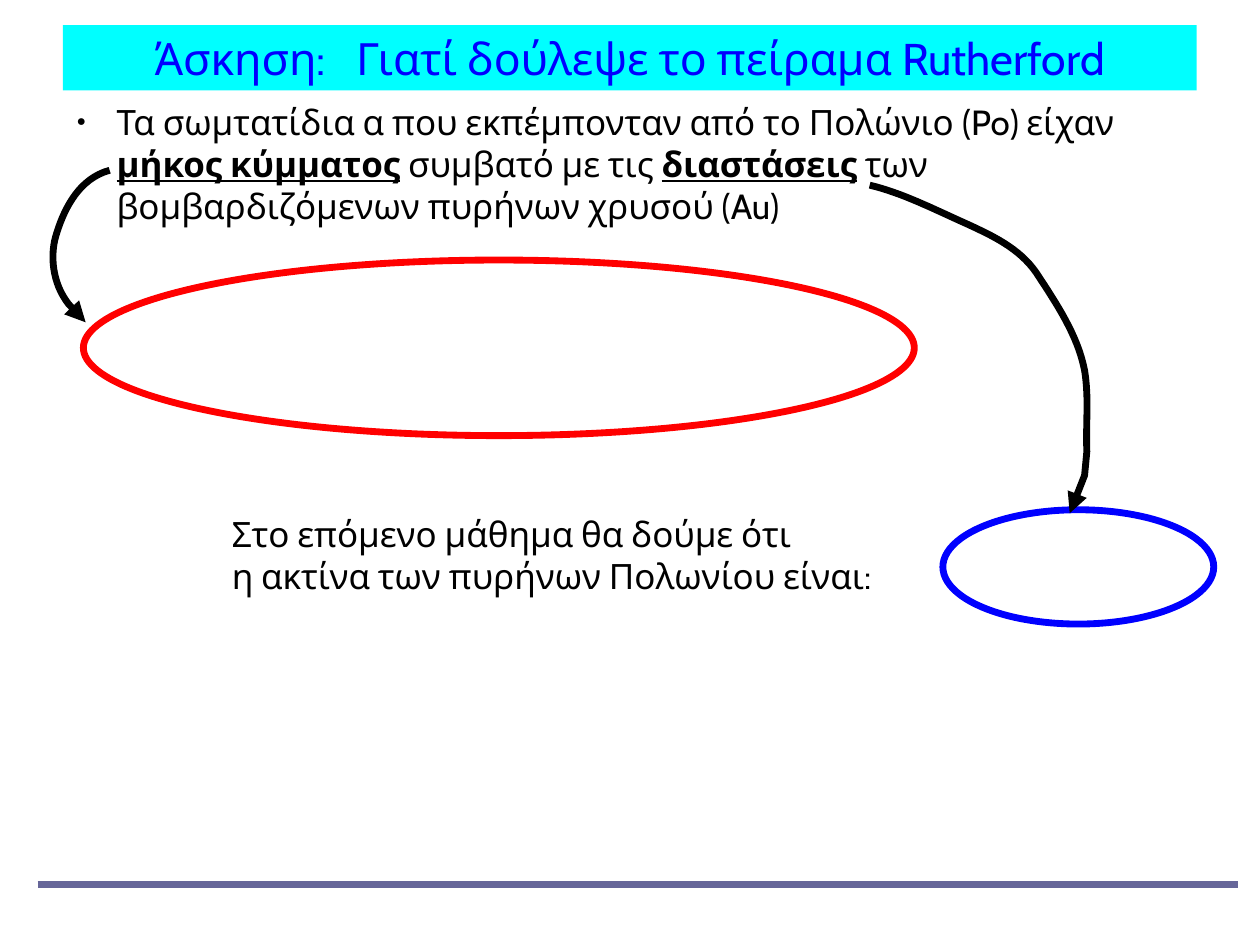
"""Build the slide on why the Rutherford experiment worked."""
from dataclasses import dataclass
from typing import NamedTuple

import lxml.etree
import pptx
import pptx.dml.color
import pptx.dml.line
import pptx.enum.shapes
import pptx.enum.text
import pptx.oxml.ns
import pptx.shapes.base
import pptx.slide
import pptx.text.text
import pptx.util

Pt = pptx.util.Pt
RGB = pptx.dml.color.RGBColor
Point = tuple[float, float]


@dataclass(frozen=True)
class Theme:
    font: str = "Cabin"
    title_size: float = 28
    body_size: float = 22
    stroke: float = 4.31
    ink: RGB = RGB(0, 0, 0)
    blue: RGB = RGB(0, 0, 255)
    red: RGB = RGB(255, 0, 0)
    cyan: RGB = RGB(0, 255, 255)
    rule: RGB = RGB(0x66, 0x66, 0x99)


THEME = Theme()


class Box(NamedTuple):
    left: float
    top: float
    width: float
    height: float


class Phrase(NamedTuple):
    text: str
    key: bool = False
    gap: float = 0


class Ring(NamedTuple):
    box: Box
    color: RGB


class Arrow(NamedTuple):
    start: Point
    curves: list[tuple[Point, Point, Point]]
    corners: list[Point]


PAGE = (793.75, 595.25)
TITLE_BOX = Box(39.6, 15.84, 714.24, 41.04)
BODY_BOX = Box(39.6, 63.36, 714.24, 461.52)
NOTE_BOX = Box(138.96, 319.3, 453.6, 58.32)
FOOT_RULE = ((23.76, 556.9), (779.76, 556.9))

TITLE = [
    Phrase("Άσκηση:"),
    Phrase(" ", gap=13),
    Phrase("Γιατί δούλεψε το πείραμα Rutherford"),
]
BODY = [
    Phrase("Τα σωμτατίδια α που εκπέμπονταν από το Πολώνιο (Po) είχαν "),
    Phrase("μήκος κύμματος", key=True),
    Phrase(" συμβατό με τις "),
    Phrase("διαστάσεις", key=True),
    Phrase(" των βομβαρδιζόμενων πυρήνων χρυσού (Au)"),
]
NOTE = [
    Phrase("Στο επόμενο μάθημα θα δούμε ότι"),
    Phrase("η ακτίνα των πυρήνων Πολωνίου είναι:"),
]
RINGS = [
    Ring(Box(594, 321.12, 170.64, 72), THEME.blue),
    Ring(Box(52.56, 163.8, 523.44, 110.6), THEME.red),
]
ARROWS = [
    Arrow(
        (69.12, 107.28),
        [
            ((50.4, 112.32), (41.04, 130.32), (36, 146.16)),
            ((30.96, 160.56), (33.12, 178.56), (43.2, 191.52)),
        ],
        [(54, 203.04)],
    ),
    Arrow(
        (547.92, 116.64),
        [
            ((568.8, 121.68), (588.24, 131.76), (607.68, 140.4)),
            ((624.96, 148.32), (642.24, 156.24), (653.04, 172.08)),
            ((665.28, 190.8), (678.96, 210.96), (683.28, 233.28)),
            ((686.16, 250.56), (684, 267.12), (684.72, 284.4)),
        ],
        [(683.28, 299.52), (676.8, 316.08), (673.92, 323.28)],
    ),
]


def add_xml(parent: lxml.etree._Element, tag: str, **attributes: str) -> lxml.etree._Element:
    """Append a DrawingML element to its parent."""
    return lxml.etree.SubElement(parent, pptx.oxml.ns.qn(tag), attributes)


def place(shape: pptx.shapes.base.BaseShape, box: Box) -> None:
    """Move a shape to its box."""
    shape.left, shape.top, shape.width, shape.height = map(Pt, box)


def prepare(frame: pptx.text.text.TextFrame, anchor: pptx.enum.text.MSO_ANCHOR) -> None:
    """Give a placeholder's frame no margins and a fixed size."""
    frame.margin_left = frame.margin_top = frame.margin_right = frame.margin_bottom = Pt(0)
    frame.auto_size = pptx.enum.text.MSO_AUTO_SIZE.NONE
    frame.vertical_anchor = anchor
    frame.word_wrap = True


def write(paragraph: pptx.text.text._Paragraph, phrases: list[Phrase], size: float, color: RGB) -> None:
    """Write phrases into a paragraph, one run each."""
    for phrase in phrases:
        run = paragraph.add_run()
        run.text = phrase.text
        run.font.name = THEME.font
        run.font.size = Pt(size)
        run.font.color.rgb = color
        run.font.bold = run.font.underline = phrase.key
        if phrase.gap:
            run.font._element.set("spc", str(round(phrase.gap * 100)))


def stroke(line: pptx.dml.line.LineFormat, color: RGB) -> None:
    """Apply the slide's line width and a colour."""
    line.color.rgb = color
    line.width = Pt(THEME.stroke)


def fill_title(slide: pptx.slide.Slide) -> None:
    """Fill the title band."""
    title = slide.shapes.title
    place(title, TITLE_BOX)
    title.fill.solid()
    title.fill.fore_color.rgb = THEME.cyan
    prepare(title.text_frame, pptx.enum.text.MSO_ANCHOR.MIDDLE)
    paragraph = title.text_frame.paragraphs[0]
    paragraph.alignment = pptx.enum.text.PP_ALIGN.CENTER
    write(paragraph, TITLE, THEME.title_size, THEME.blue)


def fill_body(slide: pptx.slide.Slide) -> None:
    """Fill the bulleted statement."""
    body = slide.placeholders[1]
    place(body, BODY_BOX)
    prepare(body.text_frame, pptx.enum.text.MSO_ANCHOR.TOP)
    paragraph = body.text_frame.paragraphs[0]
    paragraph.space_before, paragraph.space_after = Pt(0), Pt(14.2)
    write(paragraph, BODY, THEME.body_size, THEME.ink)
    properties = paragraph._p.get_or_add_pPr()
    properties.set("marL", str(Pt(33.84)))
    properties.set("indent", str(Pt(-25.2)))
    add_xml(add_xml(properties, "a:buClr"), "a:srgbClr", val=str(THEME.ink))
    add_xml(properties, "a:buSzPct", val="45000")
    add_xml(properties, "a:buChar", char="●")


def add_note(slide: pptx.slide.Slide) -> None:
    """Add the remark on the nuclear radius."""
    frame = slide.shapes.add_textbox(*map(Pt, NOTE_BOX)).text_frame
    frame.word_wrap = True
    for index, phrase in enumerate(NOTE):
        paragraph = frame.add_paragraph() if index else frame.paragraphs[0]
        write(paragraph, [phrase], THEME.body_size, THEME.ink)


def add_rule(slide: pptx.slide.Slide) -> None:
    """Add the line at the foot of the slide."""
    start, end = FOOT_RULE
    kind = pptx.enum.shapes.MSO_CONNECTOR.STRAIGHT
    rule = slide.shapes.add_connector(kind, *map(Pt, start + end))
    stroke(rule.line, THEME.rule)
    add_xml(rule._element.spPr, "a:effectLst")


def add_ring(slide: pptx.slide.Slide, ring: Ring) -> None:
    """Add an unfilled ellipse."""
    ellipse = slide.shapes.add_shape(pptx.enum.shapes.MSO_SHAPE.OVAL, *map(Pt, ring.box))
    ellipse.fill.background()
    ellipse.shadow.inherit = False
    stroke(ellipse.line, ring.color)


def bezier(a: Point, b: Point, c: Point, d: Point, steps: int = 16) -> list[Point]:
    """Return points along a cubic curve, without its start."""
    times = [step / steps for step in range(1, steps + 1)]
    return [
        tuple((1 - t) ** 3 * p + 3 * (1 - t) ** 2 * t * q + 3 * (1 - t) * t**2 * r + t**3 * s
              for p, q, r, s in zip(a, b, c, d))
        for t in times
    ]


def add_arrow(slide: pptx.slide.Slide, arrow: Arrow) -> None:
    """Add a curved arrow."""
    points = [arrow.start]
    for curve in arrow.curves:
        points += bezier(points[-1], *curve)
    points += arrow.corners
    builder = slide.shapes.build_freeform(*map(Pt, arrow.start))
    builder.add_line_segments([(Pt(x), Pt(y)) for x, y in points[1:]], close=False)
    shape = builder.convert_to_shape()
    shape.fill.background()
    shape.shadow.inherit = False
    stroke(shape.line, THEME.ink)
    add_xml(shape.line._get_or_add_ln(), "a:tailEnd", type="triangle")


def main() -> None:
    """Build and save the slide."""
    deck = pptx.Presentation()
    deck.slide_width, deck.slide_height = map(Pt, PAGE)
    slide = deck.slides.add_slide(deck.slide_layouts[1])
    add_rule(slide)
    fill_title(slide)
    fill_body(slide)
    for ring in RINGS:
        add_ring(slide, ring)
    for arrow in ARROWS:
        add_arrow(slide, arrow)
    add_note(slide)
    deck.save("out.pptx")


if __name__ == "__main__":
    main()
